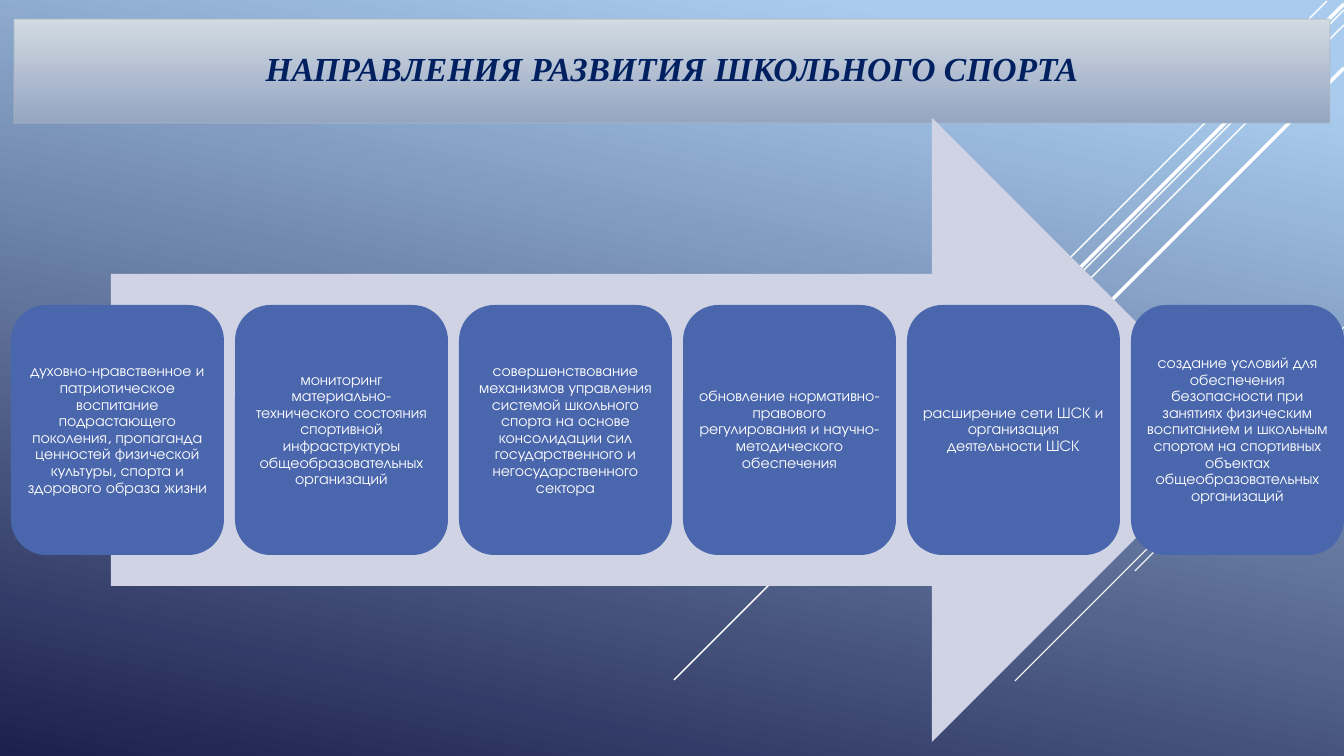
from dataclasses import dataclass

from lxml import etree
from pptx import Presentation, util as u
from pptx.dml.color import RGBColor
from pptx.enum import shapes, text
from pptx.oxml import ns

# Content
TITLE = "НАПРАВЛЕНИЯ РАЗВИТИЯ ШКОЛЬНОГО СПОРТА"
DIRECTIONS = [
    "духовно-нравственное и патриотическое воспитание подрастающего поколения, "
    "пропаганда ценностей физической культуры, спорта и здорового образа жизни",
    "мониторинг материально-технического состояния спортивной инфраструктуры "
    "общеобразовательных организаций",
    "совершенствование механизмов управления системой школьного спорта на основе "
    "консолидации сил государственного и негосударственного сектора",
    "обновление нормативно-правового регулирования и научно-методического обеспечения",
    "расширение сети ШСК и организация деятельности ШСК",
    "создание условий для обеспечения безопасности при занятиях физическим воспитанием "
    "и школьным спортом на спортивных объектах общеобразовательных организаций",
]

# Diagonal rays at 45°: right end x, y, horizontal run (px), width (pt)
RAYS = [
    (1344, 327, 101, 0.75),
    (1344, 352, 329, 0.75),
    (1344, 362, 209, 0.75),
    (1344, 345, 193, 2.25),
    (1344, 406, 140, 2.25),
    (1327, 1, 420, 1),
    (1344, 10, 670, 1),
    (1344, 25, 546, 1),
    (1344, 4, 535, 2.5),
    (1344, 68, 479, 2.5),
]

# Layout in px
SLIDE_SIZE = (1344, 756)
TITLE_BOX = (14, 19, 1316, 104)
ARROW_BOX = (111, 118, 1133, 624)
CARD_LEFT, CARD_TOP, CARD_WIDTH, CARD_HEIGHT = 11, 305, 213, 250
CARD_PITCH = 224
CARD_INSET = 5


@dataclass(frozen=True)
class Theme:
    sky: str = "A9CCEE"
    night: str = "1C204D"
    title_top: str = "D2DBE2"
    title_bottom: str = "95A5C3"
    title_line: str = "AAB8C2"
    title_text: str = "002060"
    arrow: str = "D0D3E3"
    card: str = "4A66AC"
    white: str = "FFFFFF"
    title_font: str = "Times New Roman"
    card_font: str = "TeX Gyre Adventor"
    title_size: int = 24
    card_size: int = 11


THEME = Theme()


def px(length):
    return u.Emu(round(length * 914400 / 100.8))


def rgb(color):
    return RGBColor.from_string(color)


def fill_gradient(fill, stops, angle):
    """Two-stop gradient; the angle runs counter-clockwise."""
    fill.gradient()
    fill.gradient_angle = angle
    for stop, (position, color) in zip(fill.gradient_stops, stops):
        stop.position = position
        stop.color.rgb = rgb(color)


def add_ray(page, right, top, run, width):
    ray = page.shapes.add_connector(
        shapes.MSO_CONNECTOR.STRAIGHT, px(right), px(top), px(right - run), px(top + run))
    ray.line.color.rgb = rgb(THEME.white)
    ray.line.width = u.Pt(width)
    etree.SubElement(ray._element.spPr, ns.qn("a:effectLst"))


def add_block(page, kind, box, color):
    block = page.shapes.add_shape(kind, *map(px, box))
    block.shadow.inherit = False
    block.fill.solid()
    block.fill.fore_color.rgb = rgb(color)
    block.line.fill.background()
    return block


def write(shape, words, font_name, size, color):
    frame = shape.text_frame
    frame.word_wrap = True
    frame.vertical_anchor = text.MSO_ANCHOR.MIDDLE
    para = frame.paragraphs[0]
    para.text = words
    para.alignment = text.PP_ALIGN.CENTER
    para.line_spacing = 0.9
    para.font.name = font_name
    para.font.size = u.Pt(size)
    para.font.color.rgb = rgb(color)
    return para


def place_title(page):
    title = page.shapes.title
    title.left, title.top, title.width, title.height = map(px, TITLE_BOX)
    fill_gradient(title.fill, [(0, THEME.title_top), (1, THEME.title_bottom)], 270)
    title.line.color.rgb = rgb(THEME.title_line)
    title.line.width = u.Pt(0.75)
    line_color = title.line._ln.find(".//" + ns.qn("a:srgbClr"))
    etree.SubElement(line_color, ns.qn("a:alpha"), val="60000")
    para = write(title, TITLE, THEME.title_font, THEME.title_size, THEME.title_text)
    para.font.bold = True
    para.font.italic = True
    # Bring the title in front of the rays
    page.shapes._spTree.append(title._element)


def add_card(page, index, words):
    box = (CARD_LEFT + index * CARD_PITCH, CARD_TOP, CARD_WIDTH, CARD_HEIGHT)
    card = add_block(page, shapes.MSO_SHAPE.ROUNDED_RECTANGLE, box, THEME.card)
    frame = card.text_frame
    frame.margin_left = frame.margin_right = px(CARD_INSET)
    frame.margin_top = frame.margin_bottom = px(CARD_INSET)
    write(card, words, THEME.card_font, THEME.card_size, THEME.white)


def main():
    deck = Presentation()
    deck.slide_width, deck.slide_height = map(px, SLIDE_SIZE)
    page = deck.slides.add_slide(deck.slide_layouts.get_by_name("Title Only"))

    # Background and rays
    fill_gradient(page.background.fill, [(0.1, THEME.sky), (1, THEME.night)], 258)
    for ray in RAYS:
        add_ray(page, *ray)

    # Title, arrow and cards
    place_title(page)
    add_block(page, shapes.MSO_SHAPE.RIGHT_ARROW, ARROW_BOX, THEME.arrow)
    for index, words in enumerate(DIRECTIONS):
        add_card(page, index, words)

    deck.save("out.pptx")


if __name__ == "__main__":
    main()
